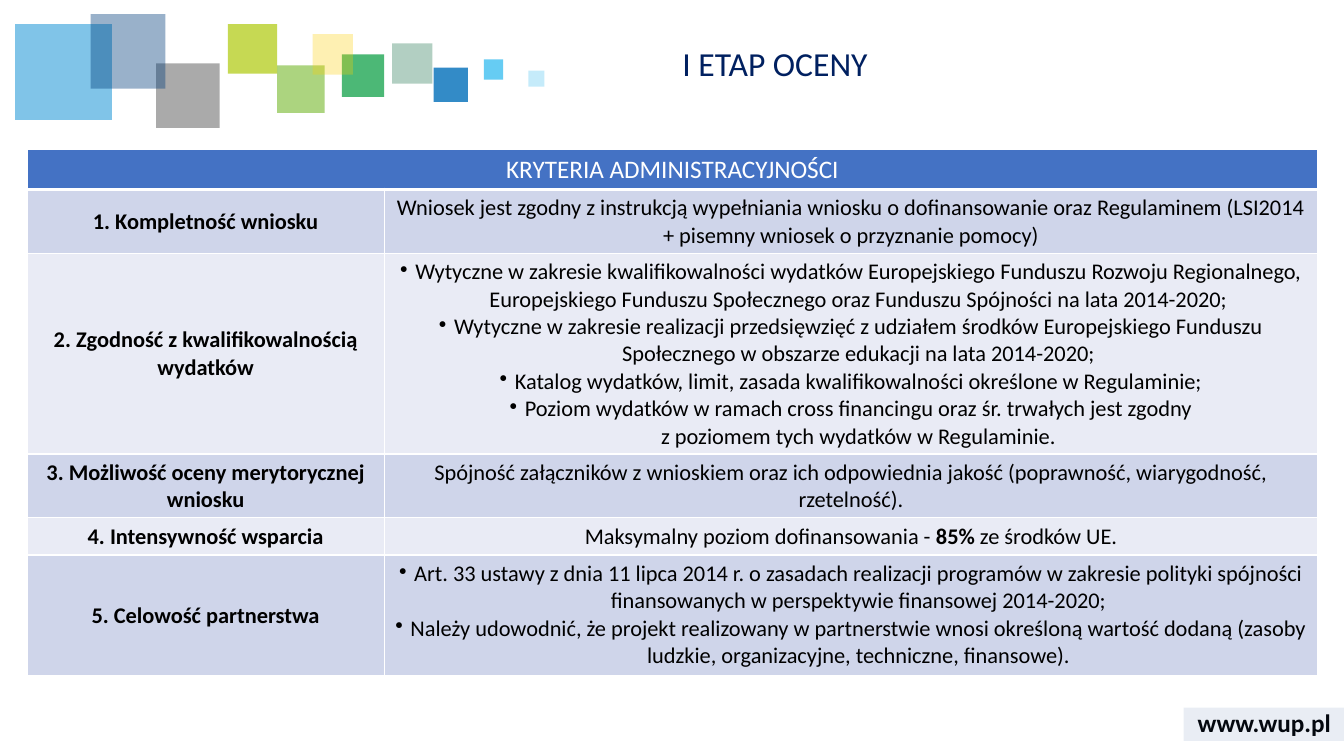
import pptx
import pptx.dml.color
import pptx.enum.shapes
import pptx.enum.text
import pptx.oxml
import pptx.oxml.ns
import pptx.util
from lxml import etree

Inches, Pt = pptx.util.Inches, pptx.util.Pt
qn = pptx.oxml.ns.qn
PP_ALIGN = pptx.enum.text.PP_ALIGN
ANCHOR = pptx.enum.text.MSO_ANCHOR

TITLE = "I ETAP OCENY"
WEB_ADDRESS = "www.wup.pl"
TABLE_HEADING = "KRYTERIA ADMINISTRACYJNOŚCI"

# Criterion, requirements (several are bulleted; ** surrounds bold words), row height
CRITERIA = [
    ("1. Kompletność wniosku",
     ["Wniosek jest zgodny z instrukcją wypełniania wniosku o dofinansowanie "
      "oraz Regulaminem (LSI2014 + pisemny wniosek o przyznanie pomocy)"], 0.63),
    ("2. Zgodność z kwalifikowalnością wydatków",
     ["Wytyczne w zakresie kwalifikowalności wydatków Europejskiego Funduszu Rozwoju "
      "Regionalnego, Europejskiego Funduszu Społecznego oraz Funduszu Spójności "
      "na lata 2014-2020;",
      "Wytyczne w zakresie realizacji przedsięwzięć z udziałem środków Europejskiego "
      "Funduszu Społecznego w obszarze edukacji na lata 2014-2020;",
      "Katalog wydatków, limit, zasada kwalifikowalności określone w Regulaminie;",
      "Poziom wydatków w ramach cross financingu oraz śr. trwałych jest zgodny\n"
      "z poziomem tych wydatków w Regulaminie."], 1.99),
    ("3. Możliwość oceny merytorycznej wniosku",
     ["Spójność załączników z wnioskiem oraz ich odpowiednia jakość "
      "(poprawność, wiarygodność, rzetelność)."], 0.63),
    ("4. Intensywność wsparcia",
     ["Maksymalny poziom dofinansowania - **85%** ze środków UE."], 0.37),
    ("5. Celowość partnerstwa",
     ["Art. 33 ustawy z dnia 11 lipca 2014 r. o zasadach realizacji programów w zakresie "
      "polityki spójności finansowanych w perspektywie finansowej 2014-2020;",
      "Należy udowodnić, że projekt realizowany w partnerstwie wnosi określoną wartość "
      "dodaną (zasoby ludzkie, organizacyjne, techniczne, finansowe)."], 1.2),
]
HEADING_HEIGHT = 0.4
COLUMN_WIDTHS = (3.54, 9.26)
TABLE_LEFT, TABLE_TOP = 0.27, 1.48

# Left, top, width, height, colour, opacity in percent
SQUARES = [
    (3.89, 0.43, 0.4, 0.4, "006138", 30),
    (4.3, 0.67, 0.34, 0.34, "006EB9", 80),
    (3.39, 0.54, 0.42, 0.42, "009A3C", 70),
    (0.15, 0.24, 0.96, 0.95, "028BD3", 50),
    (2.75, 0.65, 0.47, 0.47, "75B82A", 60),
    (1.55, 0.63, 0.63, 0.64, "575757", 50),
    (0.9, 0.14, 0.74, 0.74, "003D7C", 40),
    (4.8, 0.59, 0.19, 0.2, "40C0F1", 80),
    (2.26, 0.24, 0.49, 0.49, "AFCA0B", 70),
    (3.1, 0.34, 0.4, 0.4, "FED000", 30),
    (5.24, 0.7, 0.16, 0.16, "40C0F1", 30),
]
ADDRESS_BAND = (11.74, 7.02, 1.6, 0.33, "2F5597", 10)

THEME = {
    "font": "Calibri",
    "title": "002060", "text": "000000", "heading_text": "FFFFFF",
    "heading_fill": "4472C4", "bands": ("CFD5EA", "E9EBF5"), "border": "FFFFFF",
    "title_size": 24, "heading_size": 18, "address_size": 18, "body_size": 16,
}


def colour(code):
    return pptx.dml.color.RGBColor.from_string(code)


def write_paragraph(paragraph, text, size, code, bold=False, align=PP_ALIGN.CENTER):
    """Write text, switching between plain and bold at each ** mark."""
    pieces = text.split("**")
    paragraph.text = pieces[0]
    for index, piece in enumerate(pieces[1:], 1):
        run = paragraph.add_run()
        run.text = piece
        run.font.bold = index % 2 == 1
    paragraph.alignment = align
    for run in paragraph.runs:
        run.font.name = THEME["font"]
        run.font.size = Pt(size)
        run.font.color.rgb = colour(code)
        if run.font.bold is None:
            run.font.bold = bold
    for line_break in paragraph._p.findall(qn("a:br")):
        etree.SubElement(line_break, qn("a:rPr"), sz=str(size * 100))


def add_bullet(paragraph):
    properties = paragraph._p.get_or_add_pPr()
    properties.set("marL", str(Inches(0.15)))
    properties.set("indent", str(-Inches(0.15)))
    etree.SubElement(properties, qn("a:buChar"), char="•")


def add_text(slide, box, text, anchor, **style):
    text_frame = slide.shapes.add_textbox(*map(Inches, box)).text_frame
    text_frame.word_wrap = True
    text_frame.vertical_anchor = anchor
    write_paragraph(text_frame.paragraphs[0], text, **style)
    return text_frame


def add_translucent_rectangle(slide, left, top, width, height, code, opacity):
    shape = slide.shapes.add_shape(
        pptx.enum.shapes.MSO_SHAPE.RECTANGLE, *map(Inches, (left, top, width, height)))
    shape.shadow.inherit = False
    shape.line.fill.background()
    shape.fill.solid()
    shape.fill.fore_color.rgb = colour(code)
    fill_colour = shape._element.spPr.find(".//" + qn("a:srgbClr"))
    etree.SubElement(fill_colour, qn("a:alpha"), val=str(opacity * 1000))


def style_cell(cell, fill, top_width=1, bottom_width=1):
    properties = cell._tc.get_or_add_tcPr()
    for side, width in (("L", 1), ("R", 1), ("T", top_width), ("B", bottom_width)):
        line = etree.SubElement(properties, qn(f"a:ln{side}"), w=str(Pt(width)))
        line_fill = etree.SubElement(line, qn("a:solidFill"))
        etree.SubElement(line_fill, qn("a:srgbClr"), val=THEME["border"])
    cell.fill.solid()
    cell.fill.fore_color.rgb = colour(fill)


def add_criteria_table(slide):
    heights = [HEADING_HEIGHT] + [height for _, _, height in CRITERIA]
    table = slide.shapes.add_table(
        len(heights), len(COLUMN_WIDTHS), Inches(TABLE_LEFT), Inches(TABLE_TOP),
        Inches(sum(COLUMN_WIDTHS)), Inches(sum(heights))).table
    table.horz_banding = False
    for column, width in zip(table.columns, COLUMN_WIDTHS):
        column.width = Inches(width)
    for row, height in zip(table.rows, heights):
        row.height = Inches(height)

    heading = table.cell(0, 0)
    heading.merge(table.cell(0, 1))
    for cell in table.rows[0].cells:
        style_cell(cell, THEME["heading_fill"], bottom_width=3)
    write_paragraph(heading.text_frame.paragraphs[0], TABLE_HEADING,
                    THEME["heading_size"], THEME["heading_text"])

    body = {"size": THEME["body_size"], "code": THEME["text"]}
    for index, (criterion, requirements, _) in enumerate(CRITERIA):
        name_cell, detail_cell = table.rows[index + 1].cells
        for cell in (name_cell, detail_cell):
            style_cell(cell, THEME["bands"][index % 2], top_width=3 if index == 0 else 1)
        name_cell.vertical_anchor = ANCHOR.MIDDLE
        write_paragraph(name_cell.text_frame.paragraphs[0], criterion, bold=True, **body)
        text_frame = detail_cell.text_frame
        for position, requirement in enumerate(requirements):
            paragraph = text_frame.add_paragraph() if position else text_frame.paragraphs[0]
            if len(requirements) > 1:
                add_bullet(paragraph)
            write_paragraph(paragraph, requirement, **body)


def main():
    presentation = pptx.Presentation()
    presentation.slide_width, presentation.slide_height = Inches(13.33), Inches(7.5)
    slide = presentation.slides.add_slide(presentation.slide_layouts[6])

    add_text(slide, (11.74, 6.97, 1.6, 0.4), WEB_ADDRESS, ANCHOR.MIDDLE,
             size=THEME["address_size"], code=THEME["text"], bold=True)
    for rectangle in SQUARES + [ADDRESS_BAND]:
        add_translucent_rectangle(slide, *rectangle)
    add_criteria_table(slide)
    title = add_text(slide, (6.67, 0.42, 6.36, 0.55), TITLE, ANCHOR.TOP,
                     size=THEME["title_size"], code=THEME["title"], align=PP_ALIGN.LEFT)
    title.paragraphs[0].line_spacing = 0.9

    presentation.save("out.pptx")


if __name__ == "__main__":
    main()
